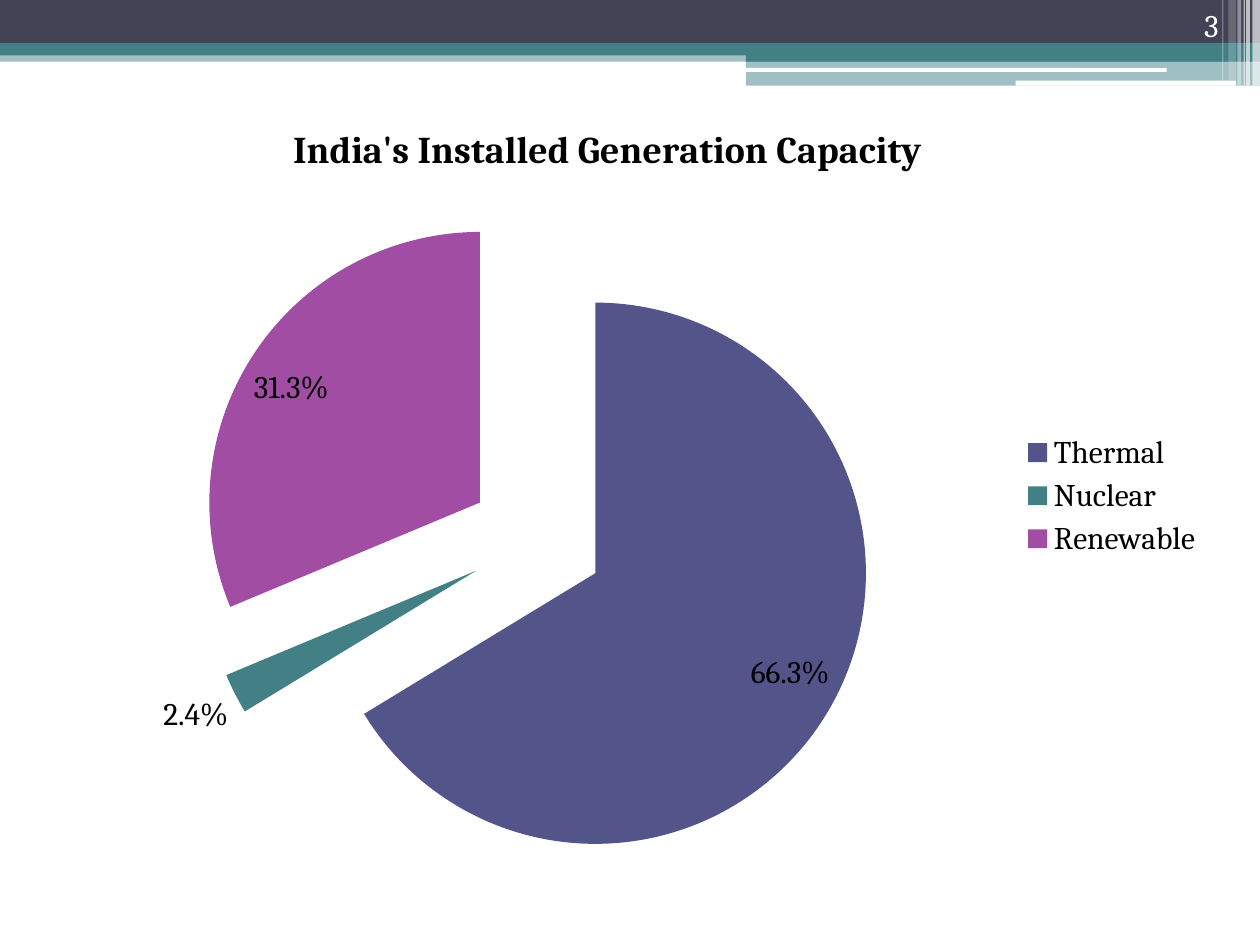
import pptx
import pptx.util
import pptx.dml.color
import pptx.chart.data
import pptx.enum.chart
import pptx.enum.shapes
import pptx.enum.text
import pptx.oxml
import pptx.oxml.ns

Inches, Pt = pptx.util.Inches, pptx.util.Pt
SHAPE = pptx.enum.shapes.MSO_SHAPE

THEME = {
    "font": "Cambria", "body": 18, "title": 21.6,
    "slate": "424456", "teal": "438086", "indigo": "53548A",
    "purple": "A04DA3", "white": "FFFFFF", "black": "000000",
}


def color(name):
    return pptx.dml.color.RGBColor.from_string(THEME[name])


def add_bar(kind, left, top, width, height, fill, opacity=100):
    bar = page.shapes.add_shape(kind, Inches(left), Inches(top), Inches(width), Inches(height))
    bar.shadow.inherit = False
    bar.line.fill.background()
    bar.fill.solid()
    bar.fill.fore_color.rgb = color(fill)
    if opacity < 100:
        tone = bar.fill._xPr.find(".//" + pptx.oxml.ns.qn("a:srgbClr"))
        alpha = pptx.oxml.ns.qn("a:alpha")
        tone.makeelement(alpha)
        tone.append(tone.makeelement(alpha, {"val": str(opacity * 1000)}))


deck = pptx.Presentation()
deck.slide_width, deck.slide_height = Inches(10), Inches(7.5)
page = deck.slides.add_slide(deck.slide_layouts[6])

# Header bands: left, top, width, height, fill, opacity
for band in [
    (0, 0.4, 10, 0.09, "teal", 50),
    (0, 0, 10, 0.34, "slate"),
    (0, 0.34, 10, 0.1, "teal"),
    (5.92, 0.39, 4.08, 0.1, "teal"),
    (5.92, 0.48, 4.08, 0.2, "teal", 50),
]:
    add_bar(SHAPE.RECTANGLE, *band)

# White rules across the right-hand band
for rule in [(5.91, 0.54, 3.35, 0.03), (8.06, 0.64, 1.75, 0.04)]:
    add_bar(SHAPE.ROUNDED_RECTANGLE, *rule, "white")

# Translucent stripes at the right edge: left, width, height, opacity
for left, width, height, opacity in [
    (9.94, 0.06, 0.68, 65), (9.89, 0.03, 0.68, 65), (9.87, 0.01, 0.68, 60),
    (9.82, 0.03, 0.68, 40), (9.75, 0.06, 0.64, 20), (9.7, 0.01, 0.64, 30),
]:
    add_bar(SHAPE.RECTANGLE, left, 0, width, height, "white", opacity)

# Page number
box = page.shapes.add_textbox(Inches(8.94), 0, Inches(0.83), Inches(0.4))
box.text_frame.word_wrap = True
box.text_frame.vertical_anchor = pptx.enum.text.MSO_ANCHOR.BOTTOM
para = box.text_frame.paragraphs[0]
para.alignment = pptx.enum.text.PP_ALIGN.RIGHT
span = para.add_run()
span.text = "3"
span.font.name, span.font.size = THEME["font"], Pt(THEME["body"])
span.font.color.rgb = color("white")

# Pie chart
heading = "India's Installed Generation Capacity"
slices = [("Thermal", 0.663, "indigo"), ("Nuclear", 0.024, "teal"), ("Renewable", 0.313, "purple")]
data = pptx.chart.data.CategoryChartData(number_format="0.0%")
data.categories = [name for name, share, fill in slices]
data.add_series(heading, [share for name, share, fill in slices])
chart = page.shapes.add_chart(
    pptx.enum.chart.XL_CHART_TYPE.PIE, 0, Inches(0.76), Inches(9.65), Inches(6.35), data
).chart
chart.font.name, chart.font.size = THEME["font"], Pt(THEME["body"])
chart.font.color.rgb = color("black")

# Chart title
chart.has_title = True
span = chart.chart_title.text_frame.paragraphs[0].add_run()
span.text = heading
span.font.name, span.font.size, span.font.bold = THEME["font"], Pt(THEME["title"]), True
span.font.color.rgb = color("black")
chart.chart_title.include_in_layout = False

# Legend
chart.has_legend = True
chart.legend.position = pptx.enum.chart.XL_LEGEND_POSITION.RIGHT
chart.legend.include_in_layout = False

# Slice colours, and slices pulled apart by a quarter of the radius
plot = chart.plots[0]
plot.vary_by_categories = True
series = plot.series[0]
for index, (name, share, fill) in enumerate(slices):
    paint = series.points[index].format.fill
    paint.solid()
    paint.fore_color.rgb = color(fill)
explosion = series._element.makeelement(pptx.oxml.ns.qn("c:explosion"), {"val": "25"})
series._element.find(pptx.oxml.ns.qn("c:dPt")).addprevious(explosion)

# Value labels
labels = series.data_labels
labels.show_value = True
labels.show_percentage = False
labels.number_format, labels.number_format_is_linked = "0.0%", False
labels.position = pptx.enum.chart.XL_LABEL_POSITION.BEST_FIT

deck.save("out.pptx")
